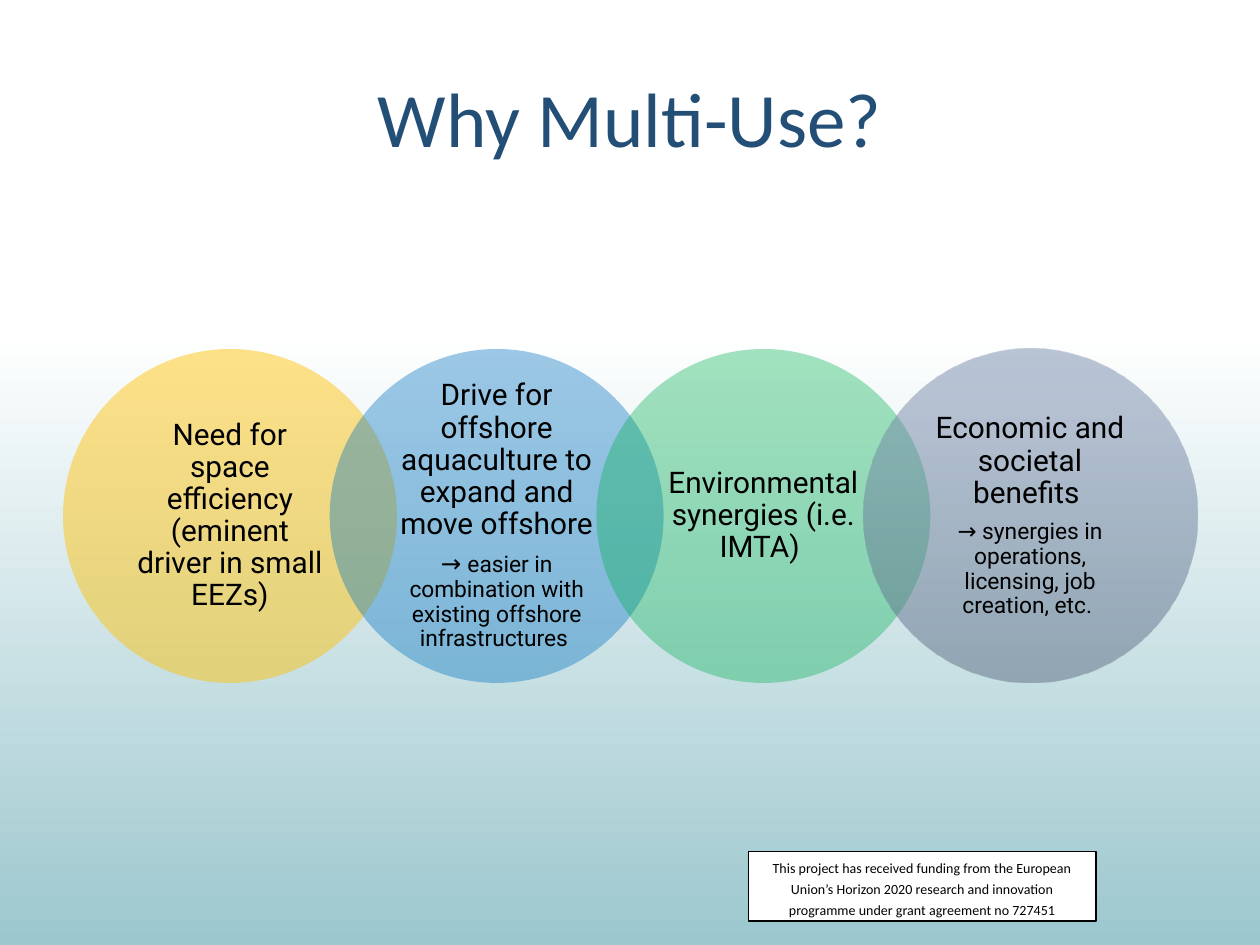
from lxml import etree
from pptx import Presentation
from pptx import util as u
from pptx.dml.color import RGBColor
from pptx.enum import shapes, text
from pptx.oxml.ns import nsdecls, qn

TITLE = "Why Multi-Use?"
FUNDING = (
    "This project has received funding from the European Union’s Horizon 2020 "
    "research and innovation programme under grant agreement no 727451"
)

# Each reason: fill stops as (position %, colour, opacity %), headline, detail runs
REASONS = [
    ([(0, "FFC000", 46)],
     "Need for space efficiency (eminent driver in small EEZs)", []),
    ([(0, "0070C0", 38)],
     "Drive for offshore aquaculture to expand and move offshore",
     [("→ ", 14),
      ("easier in combination with existing offshore infrastructures ", 13)]),
    ([(0, "00B050", 36)],
     "Environmental synergies (i.e. IMTA) ", []),
    ([(0, "5A6A83", 50), (80, "7589AA", 50), (100, "748AAC", 50)],
     "Economic and societal benefits ",
     [("→ synergies in operations, licensing, job creation, etc. ", 13)]),
]

THEME = {
    "background": [(0, "9CC7CE", 100), (65, "FFFFFF", 100), (100, "FFFFFF", 100)],
    "title_color": "234F77",
    "text_color": "000000",
    "panel_color": "FFFFFF",
    "title_font": "Calibri",
    "reason_font": "Roboto",
    "title_size": 44,
    "headline_size": 17,
    "funding_size": 8,
}

MARGIN = 0.5
SLIDE_WIDTH, SLIDE_HEIGHT = 10, 7.5
CIRCLE_TOP, DIAMETER = 2.77, 2.65


def paint(owner, stops):
    """Replace the solid fill inside owner; several stops run from bottom to top."""
    colors = [
        f'<a:srgbClr val="{color}"><a:alpha val="{opacity * 1000}"/></a:srgbClr>'
        for _, color, opacity in stops
    ]
    if len(stops) == 1:
        xml = f'<a:solidFill {nsdecls("a")}>{colors[0]}</a:solidFill>'
    else:
        marks = "".join(
            f'<a:gs pos="{stop[0] * 1000}">{color}</a:gs>'
            for stop, color in zip(stops, colors)
        )
        xml = (f'<a:gradFill {nsdecls("a")} rotWithShape="1"><a:gsLst>{marks}</a:gsLst>'
               '<a:lin ang="16200000" scaled="0"/></a:gradFill>')
    owner.replace(owner.find(qn("a:solidFill")), etree.fromstring(xml))


def set_frame(frame, inset_x, inset_y):
    frame.word_wrap = True
    frame.vertical_anchor = text.MSO_ANCHOR.MIDDLE
    frame.margin_left = frame.margin_right = u.Inches(inset_x)
    frame.margin_top = frame.margin_bottom = u.Inches(inset_y)


def add_runs(paragraph, runs, font_name, color):
    paragraph.alignment = text.PP_ALIGN.CENTER
    for words, size in runs:
        run = paragraph.add_run()
        run.text = words
        run.font.name = font_name
        run.font.size = u.Pt(size)
        run.font.color.rgb = RGBColor.from_string(color)


def add_title(slide):
    title = slide.shapes.add_textbox(
        u.Inches(MARGIN), u.Inches(0.3),
        u.Inches(SLIDE_WIDTH - 2 * MARGIN), u.Inches(1.25))
    set_frame(title.text_frame, 0.1, 0.05)
    add_runs(title.text_frame.paragraphs[0], [(TITLE, THEME["title_size"])],
             THEME["title_font"], THEME["title_color"])


def add_funding(slide):
    funding = slide.shapes.add_shape(
        shapes.MSO_SHAPE.RECTANGLE,
        u.Inches(5.94), u.Inches(6.76), u.Inches(2.76), u.Inches(0.55))
    funding.shadow.inherit = False
    funding.fill.solid()
    funding.fill.fore_color.rgb = RGBColor.from_string(THEME["panel_color"])
    funding.line.color.rgb = RGBColor.from_string(THEME["text_color"])
    funding.line.width = u.Pt(0.75)
    set_frame(funding.text_frame, 0.1, 0)
    paragraph = funding.text_frame.paragraphs[0]
    paragraph.line_spacing = u.Pt(12)
    add_runs(paragraph, [(FUNDING, THEME["funding_size"])],
             THEME["title_font"], THEME["text_color"])


def add_reason(slide, left, stops, headline, detail):
    circle = slide.shapes.add_shape(
        shapes.MSO_SHAPE.OVAL, u.Inches(left), u.Inches(CIRCLE_TOP),
        u.Inches(DIAMETER), u.Inches(DIAMETER))
    circle.shadow.inherit = False
    circle.fill.solid()
    paint(circle.element.spPr, stops)
    circle.line.fill.background()
    frame = circle.text_frame
    set_frame(frame, 0.15, 0.02)
    paragraphs = [frame.paragraphs[0]]
    add_runs(paragraphs[0], [(headline, THEME["headline_size"])],
             THEME["reason_font"], THEME["text_color"])
    if detail:
        paragraphs.append(frame.add_paragraph())
        add_runs(paragraphs[1], detail, THEME["reason_font"], THEME["text_color"])
    for paragraph in paragraphs:
        paragraph.line_spacing = 0.9
        paragraph.space_after = u.Pt(6)


def main():
    presentation = Presentation()
    presentation.slide_width = u.Inches(SLIDE_WIDTH)
    presentation.slide_height = u.Inches(SLIDE_HEIGHT)
    slide = presentation.slides.add_slide(presentation.slide_layouts[6])

    slide.background.fill.solid()
    paint(slide.element.find(".//" + qn("p:bgPr")), THEME["background"])

    add_funding(slide)
    add_title(slide)
    step = (SLIDE_WIDTH - 2 * MARGIN - DIAMETER) / (len(REASONS) - 1)
    for index, reason in enumerate(REASONS):
        add_reason(slide, MARGIN + index * step, *reason)

    presentation.save("out.pptx")


if __name__ == "__main__":
    main()
